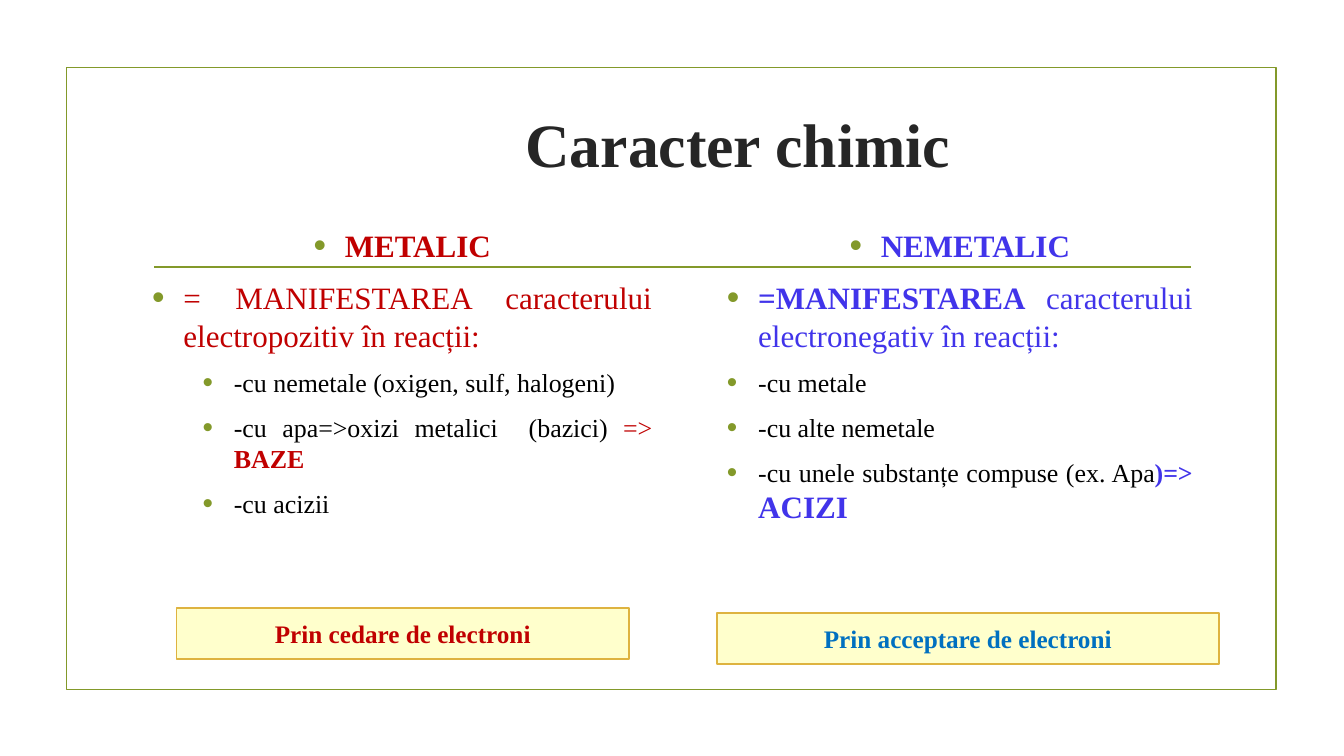
from lxml import etree
from pptx import Presentation
from pptx.dml.color import RGBColor
from pptx.enum.shapes import MSO_CONNECTOR, MSO_SHAPE
from pptx.enum.text import MSO_ANCHOR, MSO_AUTO_SIZE, PP_ALIGN
from pptx.oxml.ns import qn
from pptx.util import Inches, Pt

CENTER, JUSTIFY = PP_ALIGN.CENTER, PP_ALIGN.JUSTIFY
MIDDLE, TOP = MSO_ANCHOR.MIDDLE, MSO_ANCHOR.TOP
RECT, STRAIGHT = MSO_SHAPE.RECTANGLE, MSO_CONNECTOR.STRAIGHT
NO_FIT = MSO_AUTO_SIZE.NONE

FONT = "Times New Roman"
GREEN, RED, VIOLET, BLUE = "83992A", "C00000", "4134EA", "0070C0"
BLACK, DARK, CREAM, GOLD = "000000", "262626", "FFFFCC", "DEB340"
BIG, SMALL = 22.2, 18.5


def rgb(value):
    return RGBColor.from_string(value)


def add_run(p, text, size=SMALL, color=BLACK, bold=False):
    r = p.add_run()
    r.text = text
    r.font.name, r.font.size, r.font.bold = FONT, Pt(size), bold
    r.font.color.rgb = rgb(color)


prs = Presentation()
prs.slide_width, prs.slide_height = Inches(13.33), Inches(7.5)
s = prs.slides.add_slide(prs.slide_layouts[3])

# Frame and rule under the column headings
frame = s.shapes.add_shape(RECT, Inches(0.66), Inches(0.67), Inches(12), Inches(6.17))
frame.shadow.inherit = False
frame.fill.background()
rule = s.shapes.add_connector(STRAIGHT, Inches(1.53), Inches(2.65), Inches(11.81), Inches(2.65))
etree.SubElement(rule._element.spPr, qn("a:effectLst"))
for sp in (frame, rule):
    sp.line.color.rgb = rgb(GREEN)
    sp.line.width = Pt(1.25)

# Title
title = s.shapes.title
title.left, title.top, title.width, title.height = (Inches(v) for v in (2.32, 0.96, 10, 0.91))
tf = title.text_frame
tf.auto_size, tf.vertical_anchor = NO_FIT, MIDDLE
tf.paragraphs[0].alignment = CENTER
add_run(tf.paragraphs[0], "Caracter chimic", size=44, color=DARK, bold=True)

# Columns: each paragraph is (level, runs)
red, violet = dict(color=RED), dict(color=VIOLET)
metallic = [
    (0, [("METALIC", dict(red, size=BIG, bold=True))]),
    (0, [("= MANIFESTAREA caracterului electropozitiv în reacții:", dict(red, size=BIG))]),
    (1, [("-cu nemetale (oxigen, sulf, halogeni)", {})]),
    (1, [("-cu apa=>oxizi metalici  (bazici) ", {}), ("=> ", red), ("BAZE", dict(red, bold=True))]),
    (1, [("-cu acizii", {})]),
]
nonmetallic = [
    (0, [("NEMETALIC", dict(violet, size=BIG, bold=True))]),
    (0, [("=MANIFESTAREA ", dict(violet, size=BIG, bold=True)),
         ("caracterului electronegativ în reacții:", dict(violet, size=BIG))]),
    (0, [("-cu metale", {})]),
    (0, [("-cu alte nemetale", {})]),
    (0, [("-cu unele substanțe compuse (ex. Apa", {}), (")=> ", dict(violet, bold=True)),
         ("ACIZI", dict(violet, size=BIG, bold=True))]),
]
columns = [(1, 1.41, 5.16, 3.62, metallic), (2, 7.11, 4.82, 3.23, nonmetallic)]
for idx, left, width, height, paragraphs in columns:
    body = s.placeholders[idx]
    body.left, body.top, body.width, body.height = (Inches(v) for v in (left, 2.2, width, height))
    tf = body.text_frame
    tf.auto_size, tf.vertical_anchor = NO_FIT, TOP
    for i, (level, runs) in enumerate(paragraphs):
        p = tf.add_paragraph() if i else tf.paragraphs[0]
        p.level = level
        p.alignment = JUSTIFY if i else CENTER
        size = runs[0][1].get("size", SMALL)
        p.space_before = Pt(round(size * 0.2, 1) if i else 0)
        p.space_after = Pt(6)
        pPr = p._p.get_or_add_pPr()
        pPr.set("marL", str(Inches(0.31 + 0.5 * level)))
        pPr.set("indent", str(Inches(-0.31)))
        bullet_color = etree.SubElement(pPr, qn("a:buClr"))
        etree.SubElement(bullet_color, qn("a:srgbClr"), val=GREEN)
        etree.SubElement(pPr, qn("a:buSzPct"), val="115000")
        etree.SubElement(pPr, qn("a:buFont"), typeface="Arial")
        etree.SubElement(pPr, qn("a:buChar"), char="•")
        for text, style in runs:
            add_run(p, text, **style)

# Conclusion boxes
boxes = [
    (1.75, 6.03, 4.49, "Prin cedare de electroni", RED),
    (7.11, 6.08, 4.98, "Prin acceptare de electroni", BLUE),
]
for left, top, width, text, color in boxes:
    sp = s.shapes.add_shape(RECT, Inches(left), Inches(top), Inches(width), Inches(0.51))
    sp.shadow.inherit = False
    sp.fill.solid()
    sp.fill.fore_color.rgb = rgb(CREAM)
    sp.line.color.rgb = rgb(GOLD)
    sp.line.width = Pt(1.25)
    tf = sp.text_frame
    tf.word_wrap, tf.vertical_anchor = True, MIDDLE
    tf.paragraphs[0].alignment = CENTER
    add_run(tf.paragraphs[0], text, size=18, color=color, bold=True)

prs.save("out.pptx")
